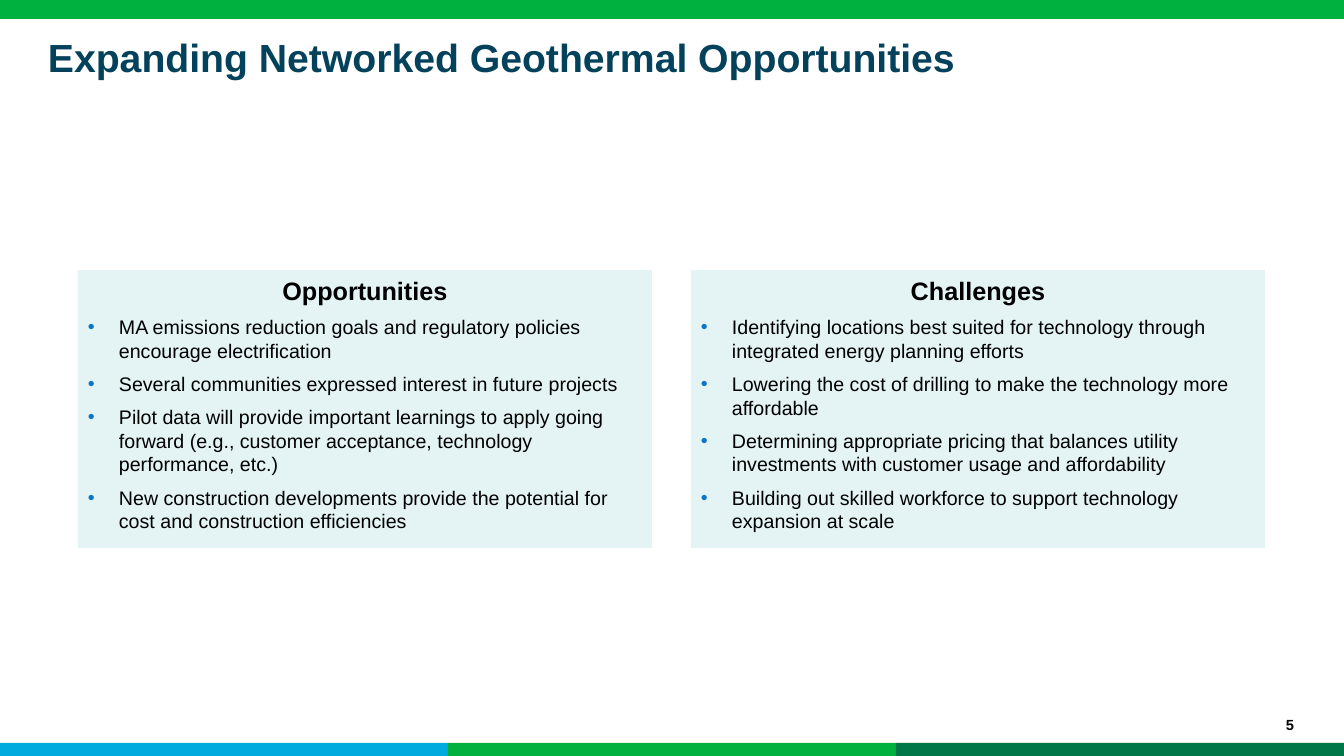
from lxml import etree
from pptx import Presentation
from pptx.dml.color import RGBColor
from pptx.enum.shapes import MSO_SHAPE
from pptx.enum.text import MSO_ANCHOR, PP_ALIGN
from pptx.oxml.ns import qn
from pptx.util import Pt

RECT = MSO_SHAPE.RECTANGLE
TOP, MIDDLE = MSO_ANCHOR.TOP, MSO_ANCHOR.MIDDLE
LEFT, CENTER, RIGHT = PP_ALIGN.LEFT, PP_ALIGN.CENTER, PP_ALIGN.RIGHT

GREEN = RGBColor(0x00, 0xB1, 0x40)
SKY = RGBColor(0x00, 0xAA, 0xDE)
FOREST = RGBColor(0x00, 0x77, 0x49)
NAVY = RGBColor(0x04, 0x42, 0x5C)
BLACK = RGBColor(0x00, 0x00, 0x00)
MINT = RGBColor(0xE4, 0xF3, 0xF4)
BLUE = RGBColor(0x0E, 0x75, 0xC4)

WIDE, HIGH = 1344, 756
INDENT = 31

PANELS = [
    ("Opportunities", [
        "MA emissions reduction goals and regulatory policies encourage electrification",
        "Several communities expressed interest in future projects",
        "Pilot data will provide important learnings to apply going forward "
        "(e.g., customer acceptance, technology performance, etc.)",
        "New construction developments provide the potential for cost and "
        "construction efficiencies",
    ]),
    ("Challenges", [
        "Identifying locations best suited for technology through integrated "
        "energy planning efforts",
        "Lowering the cost of drilling to make the technology more affordable",
        "Determining appropriate pricing that balances utility investments with "
        "customer usage and affordability",
        "Building out skilled workforce to support technology expansion at scale",
    ]),
]


def px(n):
    return round(n * 9144000 / 1008)


def set_all(item, values):
    for name, value in values.items():
        setattr(item, name, value)


def write(par, text, size, color=BLACK, bold=True, align=LEFT):
    par.text = text
    par.alignment = align
    set_all(par.font, {"name": "Arial", "size": Pt(size), "bold": bold})
    par.font.color.rgb = color


def set_frame(shape, left, top, right, bottom, anchor=TOP):
    frame = shape.text_frame
    set_all(frame, {
        "word_wrap": True, "vertical_anchor": anchor,
        "margin_left": px(left), "margin_top": px(top),
        "margin_right": px(right), "margin_bottom": px(bottom),
    })
    return frame


def add_rect(slide, box, color):
    shape = slide.shapes.add_shape(RECT, *map(px, box))
    shape.shadow.inherit = False
    shape.fill.solid()
    shape.fill.fore_color.rgb = color
    shape.line.fill.background()
    return shape


def add_label(slide, box, text, size, color, align, anchor, right):
    shape = slide.shapes.add_textbox(*map(px, box))
    frame = set_frame(shape, 0, 5, right, 5, anchor)
    write(frame.paragraphs[0], text, size, color, align=align)


def add_bullet(par):
    props = par._p.get_or_add_pPr()
    props.set("marL", str(px(INDENT)))
    props.set("indent", str(-px(INDENT)))
    tint = etree.SubElement(props, qn("a:buClr"))
    etree.SubElement(tint, qn("a:srgbClr"), val=str(BLUE))
    etree.SubElement(props, qn("a:buFont"), typeface="Arial")
    etree.SubElement(props, qn("a:buChar"), char="•")


def add_bars(slide, box):
    left, top, width, height = box
    # Top band
    add_rect(slide, (left, top, width, 19), GREEN)
    # Bottom band in three equal parts
    part = width // 3
    for i, color in enumerate((SKY, GREEN, FOREST)):
        add_rect(slide, (left + i * part, top + height - 13, part, 13), color)


def add_panel(slide, box, head, items):
    frame = set_frame(add_rect(slide, box, MINT), 10, 5, 10, 5)
    write(frame.paragraphs[0], head, 18, align=CENTER)
    for item in items:
        par = frame.add_paragraph()
        add_bullet(par)
        write(par, item, 14, bold=False)
        par.space_before = Pt(7)


def add_panels(slide, box, gap):
    left, top, width, height = box
    each = (width - gap) // len(PANELS)
    for i, (head, items) in enumerate(PANELS):
        add_panel(slide, (left + i * (each + gap), top, each, height), head, items)


def main():
    deck = Presentation()
    set_all(deck, {"slide_width": px(WIDE), "slide_height": px(HIGH)})
    slide = deck.slides.add_slide(deck.slide_layouts[6])
    add_bars(slide, (0, 0, WIDE, HIGH))
    # Title and page number
    add_label(slide, (48, 28, 1068, 92), "Expanding Networked Geothermal Opportunities",
              28, NAVY, LEFT, TOP, 10)
    add_label(slide, (1246, 711, 48, 27), "5", 10.5, BLACK, RIGHT, MIDDLE, 0)
    # Two text panels
    add_panels(slide, (78, 270, 1187, 278), 39)
    deck.save("out.pptx")


if __name__ == "__main__":
    main()
